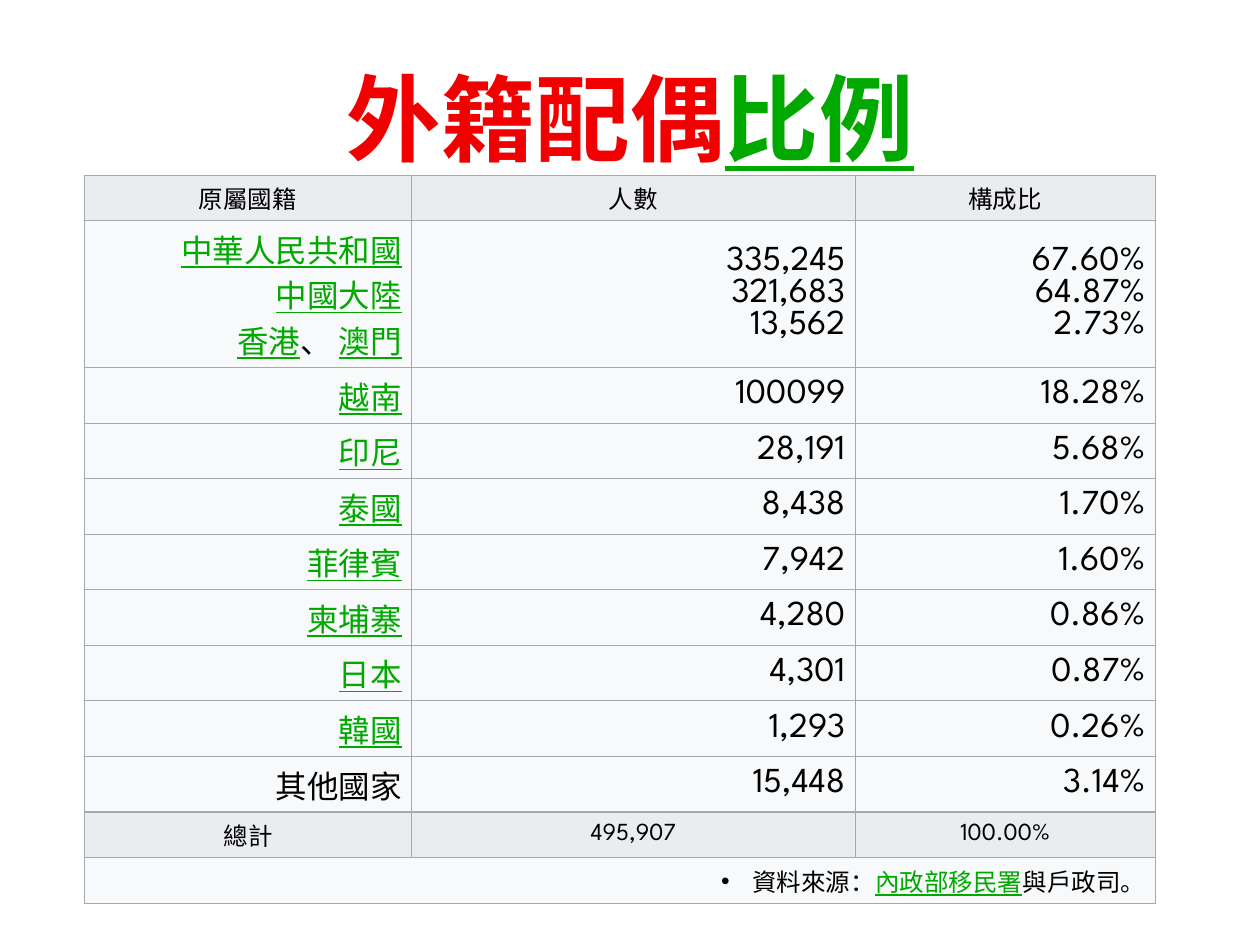
from copy import deepcopy

from lxml.etree import SubElement
from pptx import Presentation
from pptx.dml.color import RGBColor
from pptx.enum.text import MSO_ANCHOR as Anchor, PP_ALIGN as Align
from pptx.oxml.ns import qn
from pptx.util import Cm, Pt

COLORS = {
    "title": "F20000", "outline": "F2F2F2", "link": "00A800", "text": "000000",
    "band": "EAECF0", "body": "F8F9FA", "border": "A2A9B1",
}
TITLE_FONT, TABLE_FONT = "Lato", "League Spartan"

# Content: a cell is a list of (text, colour) spans; "\n" breaks the line
TITLE = [("外籍配偶", "title"), ("比例", "link")]
HEADER = ["原屬國籍", "人數", "構成比"]
CHINA = [
    ("中華人民共和國\n", "link"), ("中國大陸\n", "link"),
    ("香港", "link"), ("、 ", "text"), ("澳門", "link"),
]
COUNTRIES = [
    (CHINA, "335,245\n321,683\n13,562", "67.60%\n64.87%\n2.73%"),
    ([("越南", "link")], "100099", "18.28%"),
    ([("印尼", "link")], "28,191", "5.68%"),
    ([("泰國", "link")], "8,438", "1.70%"),
    ([("菲律賓", "link")], "7,942", "1.60%"),
    ([("柬埔寨", "link")], "4,280", "0.86%"),
    ([("日本", "link")], "4,301", "0.87%"),
    ([("韓國", "link")], "1,293", "0.26%"),
    ([("其他國家", "text")], "15,448", "3.14%"),
]
TOTAL = ["總計", "495,907", "100.00%"]
SOURCE = [("資料來源：", "text"), ("內政部移民署", "link"), ("與戶政司。", "text")]

COLUMN_WIDTHS = [6.6, 8.94, 6.05]
ROW_HEIGHT, CHINA_HEIGHT = 0.92, 2.26


def rgb(name):
    return RGBColor.from_string(COLORS[name])


def add_solid_line(parent, tag, color, width):
    line = SubElement(parent, qn(tag), w=str(Pt(width)))
    fill = SubElement(line, qn("a:solidFill"))
    SubElement(fill, qn("a:srgbClr"), val=COLORS[color])
    return line


def write_spans(para, spans, font, size, align):
    para.alignment = align
    for text, color in spans:
        for number, line in enumerate(text.split("\n")):
            if number:
                para.add_line_break()
            if not line:
                continue
            span = para.add_run()
            span.text = line
            span.font.name, span.font.size = font, Pt(size)
            span.font.color.rgb = rgb(color)
            if color == "link":
                span.font.underline = True
    # Line breaks take the height of the text around them
    for line_break in para._p.findall(qn("a:br")):
        line_break.insert(0, deepcopy(para.runs[0].font._element))


def fill_cell(cell, spans, size, align, fill):
    cell.margin_left = cell.margin_right = Cm(0.2)
    cell.margin_top = cell.margin_bottom = Cm(0.1)
    cell.vertical_anchor = Anchor.MIDDLE
    properties = cell._tc.get_or_add_tcPr()
    for side in "LRTB":
        add_solid_line(properties, f"a:ln{side}", "border", 0.75)
    cell.fill.solid()
    cell.fill.fore_color.rgb = rgb(fill)
    if isinstance(spans, str):
        spans = [(spans, "text")]
    write_spans(cell.text_frame.paragraphs[0], spans, TABLE_FONT, size, align)


def add_title(page):
    title = page.shapes.title
    title.left, title.top, title.width, title.height = Cm(1.27), Cm(0.76), Cm(22.86), Cm(3.18)
    title.text_frame.vertical_anchor = Anchor.MIDDLE
    para = title.text_frame.paragraphs[0]
    write_spans(para, TITLE, TITLE_FONT, 54, Align.CENTER)
    for span in para.runs:
        span.font.bold = True
        properties = span.font._element
        properties.insert(0, add_solid_line(properties, "a:ln", "outline", 0.15))


def add_spouse_table(page):
    row_count = len(COUNTRIES) + 3
    heights = [ROW_HEIGHT, CHINA_HEIGHT] + [ROW_HEIGHT] * (row_count - 2)
    table = page.shapes.add_table(
        row_count, len(HEADER), Cm(1.7), Cm(3.53),
        Cm(sum(COLUMN_WIDTHS)), Cm(sum(heights))).table
    table.first_row = table.horz_banding = False
    for column, width in zip(table.columns, COLUMN_WIDTHS):
        column.width = Cm(width)
    for row, height in zip(table.rows, heights):
        row.height = Cm(height)

    # Header and total bands
    for row, texts in ((0, HEADER), (row_count - 2, TOTAL)):
        for column, text in enumerate(texts):
            fill_cell(table.cell(row, column), text, 14, Align.CENTER, "band")

    # Countries
    for row, values in enumerate(COUNTRIES, 1):
        for column, value in enumerate(values):
            size = 20 if column else 18
            fill_cell(table.cell(row, column), value, size, Align.RIGHT, "body")

    # Source line across all columns
    last = row_count - 1
    source = table.cell(last, 0)
    source.merge(table.cell(last, len(HEADER) - 1))
    for column in range(1, len(HEADER)):
        fill_cell(table.cell(last, column), [], 14, Align.RIGHT, "body")
    properties = source.text_frame.paragraphs[0]._p.get_or_add_pPr()
    properties.set("marL", str(Cm(0.63)))
    properties.set("indent", str(-Cm(0.63)))
    SubElement(properties, qn("a:buFont"), typeface="Arial")
    SubElement(properties, qn("a:buChar"), char="•")
    fill_cell(source, SOURCE, 14, Align.RIGHT, "body")


def main():
    deck = Presentation()
    deck.slide_width, deck.slide_height = Cm(25.4), Cm(19.05)
    page = deck.slides.add_slide(deck.slide_layouts[5])
    add_title(page)
    add_spouse_table(page)
    deck.save("out.pptx")


if __name__ == "__main__":
    main()
